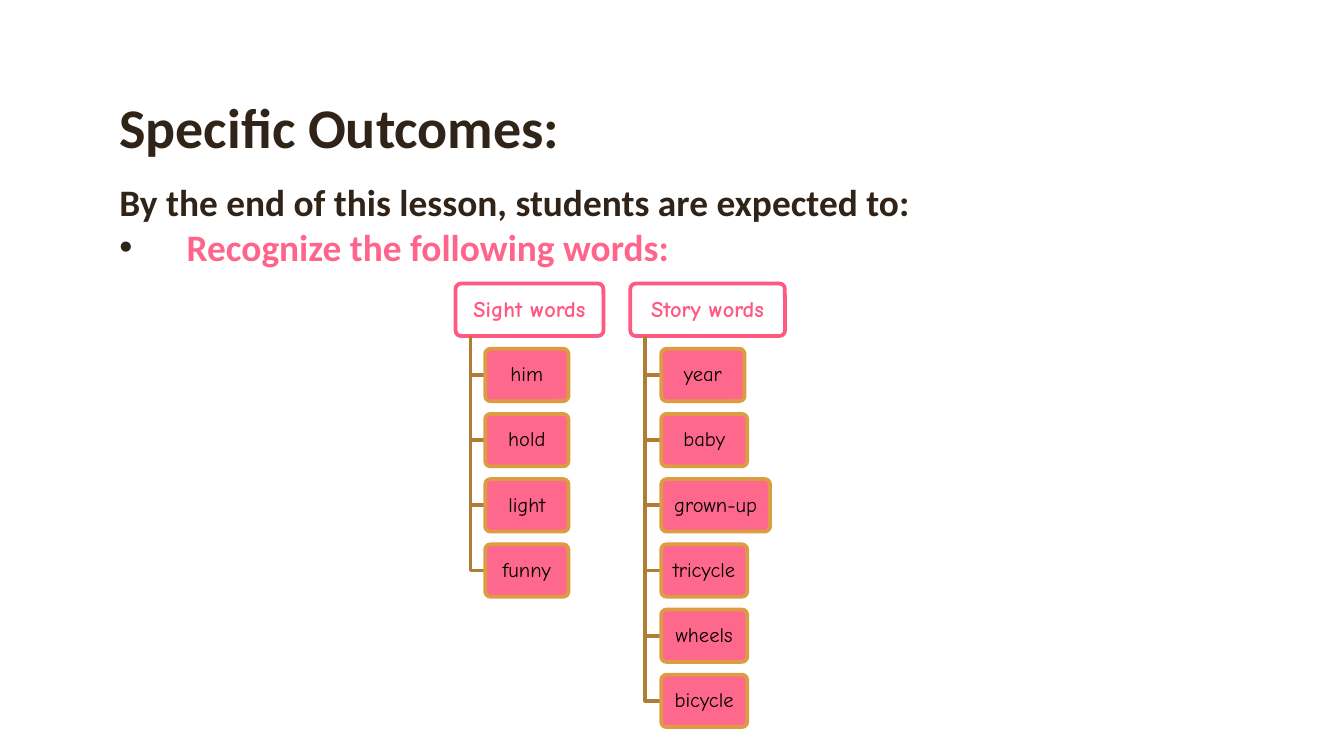
import pptx
import pptx.dml.color
import pptx.enum.shapes
import pptx.enum.text
import pptx.oxml
import pptx.oxml.ns
import pptx.util
from pptx.util import Inches

COLORS = {
    "ink": "302318",
    "heading": "FF658A",
    "pink": "FF5881",
    "gold": "DB9C42",
    "branch": "AF7D35",
    "white": "FFFFFF",
    "black": "000000",
}
BOX_HEIGHT = 0.39
HEADER_TOP, LAST_WORD_TOP = 2.11, 5.02
ROW_STEP = (LAST_WORD_TOP - HEADER_TOP) / 6
BRANCH_INDENT = 0.11
# header, left, header width, word left, words with box widths
WORD_LISTS = [
    ("Sight words", 3.39, 1.1, 3.61,
     [("him", 0.62), ("hold", 0.62), ("light", 0.62), ("funny", 0.62)]),
    ("Story words", 4.69, 1.15, 4.92,
     [("year", 0.62), ("baby", 0.64), ("grown-up", 0.81),
      ("tricycle", 0.64), ("wheels", 0.64), ("bicycle", 0.64)]),
]


def add_text(paragraph, text, font_name, size, color, bold=False):
    run = paragraph.add_run()
    run.text = text
    run.font.name = font_name
    run.font.size = pptx.util.Pt(size)
    run.font.bold = bold
    run.font.color.rgb = pptx.dml.color.RGBColor.from_string(COLORS[color])


def add_word_box(left, top, width, text, size, fill, line, text_color, bold=False):
    """Add a rounded box with centred text and return it."""
    box = slide.shapes.add_shape(
        pptx.enum.shapes.MSO_SHAPE.ROUNDED_RECTANGLE,
        Inches(left), Inches(top), Inches(width), Inches(BOX_HEIGHT))
    box.adjustments[0] = 0.1
    box.shadow.inherit = False
    box.fill.solid()
    box.fill.fore_color.rgb = pptx.dml.color.RGBColor.from_string(COLORS[fill])
    box.line.color.rgb = pptx.dml.color.RGBColor.from_string(COLORS[line])
    box.line.width = pptx.util.Pt(2)
    frame = box.text_frame
    frame.word_wrap = True
    frame.margin_left = frame.margin_right = Inches(0.02)
    frame.margin_top = frame.margin_bottom = Inches(0.02)
    frame.vertical_anchor = pptx.enum.text.MSO_ANCHOR.MIDDLE
    paragraph = frame.paragraphs[0]
    paragraph.alignment = pptx.enum.text.PP_ALIGN.CENTER
    paragraph.line_spacing = 0.9
    add_text(paragraph, text, "Comic Neue", size, text_color, bold)
    return box


presentation = pptx.Presentation()
presentation.slide_width = Inches(10)
presentation.slide_height = Inches(10 * 9 / 16)
slide = presentation.slides.add_slide(presentation.slide_layouts[6])

# Title and introduction
frames = []
for top, width, height in [(0.59, 8.43, 0.69), (1.28, 8.5, 0.82)]:
    frame = slide.shapes.add_textbox(
        Inches(0.79), Inches(top), Inches(width), Inches(height)).text_frame
    frame.word_wrap = True
    frame.margin_left = frame.margin_right = Inches(0.1)
    frame.margin_top = frame.margin_bottom = Inches(0.1)
    frames.append(frame)
title, introduction = frames
add_text(title.paragraphs[0], "Specific Outcomes:", "Calibri", 30, "ink", True)
introduction.vertical_anchor = pptx.enum.text.MSO_ANCHOR.BOTTOM
add_text(introduction.paragraphs[0],
         "By the end of this lesson, students are expected to:",
         "Calibri", 20, "ink", True)
outcome = introduction.add_paragraph()
properties = outcome._p.get_or_add_pPr()
properties.set("marL", str(Inches(0.5)))
properties.set("indent", str(Inches(-0.5)))
namespace = pptx.oxml.ns.nsdecls("a")
for bullet_xml in [
    f'<a:buClr {namespace}><a:srgbClr val="{COLORS["ink"]}"/></a:buClr>',
    f'<a:buFont {namespace} typeface="Arial"/>',
    f'<a:buChar {namespace} char="•"/>',
]:
    properties.append(pptx.oxml.parse_xml(bullet_xml))
add_text(outcome, "Recognize the following words:", "Calibri", 20, "heading", True)

# Word lists: a header with words branching off its left side
for header, left, header_width, word_left, words in WORD_LISTS:
    add_word_box(left, HEADER_TOP, header_width, header, 12,
                 "white", "pink", "pink", bold=True)
    trunk_x = Inches(left + BRANCH_INDENT)
    for row, (word, width) in enumerate(words, start=1):
        top = HEADER_TOP + row * ROW_STEP
        middle = Inches(top + BOX_HEIGHT / 2)
        builder = slide.shapes.build_freeform(trunk_x, Inches(HEADER_TOP + BOX_HEIGHT))
        builder.add_line_segments(
            [(trunk_x, middle), (Inches(word_left), middle)], close=False)
        branch = builder.convert_to_shape()
        branch.shadow.inherit = False
        branch.fill.background()
        branch.line.color.rgb = pptx.dml.color.RGBColor.from_string(COLORS["branch"])
        branch.line.width = pptx.util.Pt(2)

        box = add_word_box(word_left, top, width, word, 11, "pink", "gold", "black")
        fill_color = box.fill._xPr.find(".//" + pptx.oxml.ns.qn("a:srgbClr"))
        fill_color.append(pptx.oxml.parse_xml(f'<a:alpha {namespace} val="90000"/>'))

presentation.save("out.pptx")
